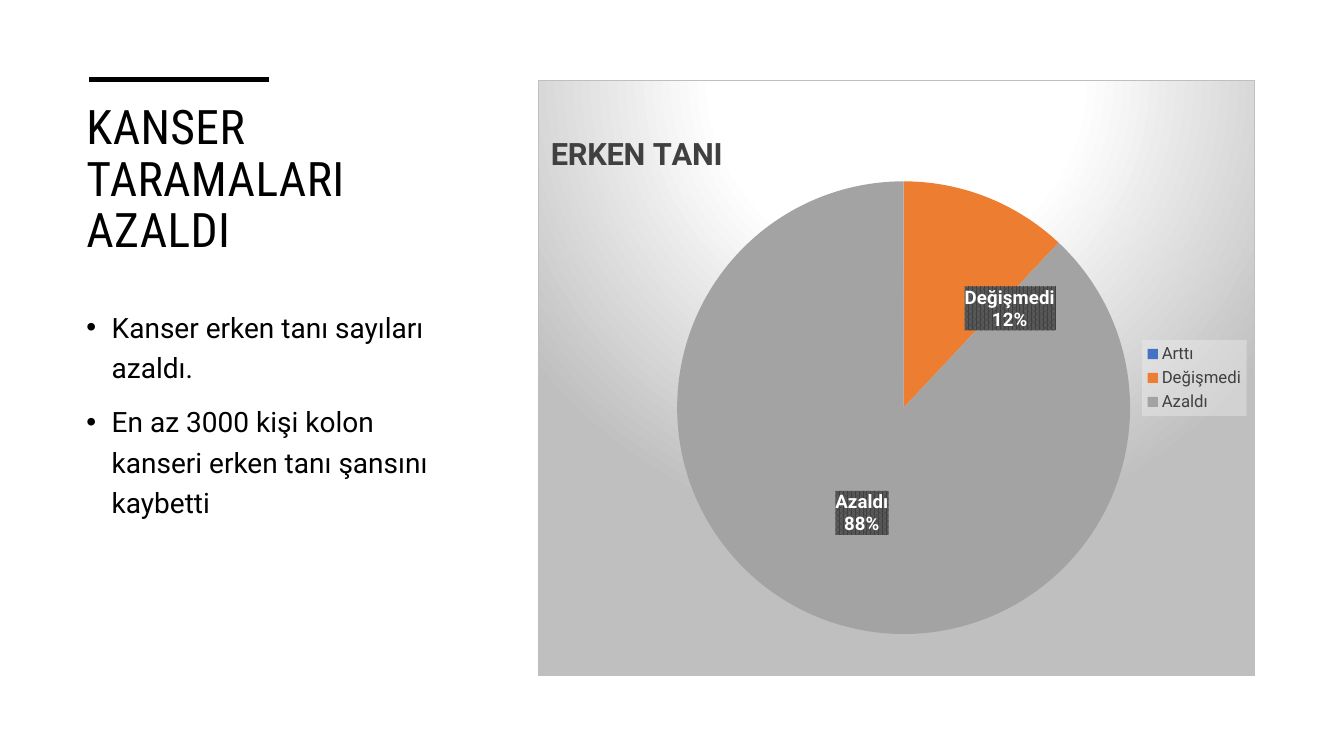
import copy

import lxml.etree
import pptx
import pptx.chart.data
import pptx.dml.color
import pptx.dml.fill
import pptx.dml.line
import pptx.enum.chart
import pptx.enum.dml
import pptx.enum.shapes
import pptx.oxml.ns
import pptx.oxml.xmlchemy
import pptx.util

RGBColor = pptx.dml.color.RGBColor
Pt = pptx.util.Pt
qn = pptx.oxml.ns.qn
BLACK = RGBColor(0x00, 0x00, 0x00)
WHITE = RGBColor(0xFF, 0xFF, 0xFF)
DARK_GREY = RGBColor(0x40, 0x40, 0x40)
MID_GREY = RGBColor(0x59, 0x59, 0x59)
SILVER = RGBColor(0xBF, 0xBF, 0xBF)
PALE_GREY = RGBColor(0xF2, 0xF2, 0xF2)
SLICE_COLORS = [RGBColor(0x44, 0x72, 0xC4), RGBColor(0xED, 0x7D, 0x31), RGBColor(0xA3, 0xA3, 0xA3)]

presentation = pptx.Presentation()
presentation.slide_width = pptx.util.Inches(13.33)
presentation.slide_height = pptx.util.Inches(7.5)
slide = presentation.slides.add_slide(presentation.slide_layouts[6])

# Grid of 100 columns by 100 rows
COLUMN = presentation.slide_width / 100
ROW = presentation.slide_height / 100
TEXT_LEFT = 5.7
TOP = 10.53


def add_text(top, width, height, texts, font_name, size, line_spacing):
    shape = slide.shapes.add_textbox(
        int(TEXT_LEFT * COLUMN), int(top * ROW), int(width * COLUMN), int(height * ROW))
    frame = shape.text_frame
    frame.word_wrap = True
    for index, text in enumerate(texts):
        paragraph = frame.add_paragraph() if index else frame.paragraphs[0]
        paragraph.line_spacing = line_spacing
        run = paragraph.add_run()
        run.text = text
        run.font.name = font_name
        run.font.size = Pt(size)
        run.font.color.rgb = BLACK
    return frame.paragraphs


def add_properties_before(text_properties):
    properties = pptx.oxml.xmlchemy.OxmlElement("c:spPr")
    text_properties.addprevious(properties)
    return properties, pptx.dml.fill.FillFormat.from_fill_parent(properties)


# Accent line and title
line = slide.shapes.add_connector(
    pptx.enum.shapes.MSO_CONNECTOR.STRAIGHT,
    int(6.6 * COLUMN), int(TOP * ROW), int(20.03 * COLUMN), int(TOP * ROW))
line.line.color.rgb = BLACK
line.line.width = Pt(3.5)
lxml.etree.SubElement(line._element.spPr, qn("a:effectLst"))

title = add_text(13.07, 29.86, 22.93, ["KANSER TARAMALARI AZALDI"], "Roboto Condensed", 34, 0.9)
title[0].runs[0].font._element.set("spc", "30")

# Bullets
bullets = add_text(39.47, 29.41, 51.07, [
    "Kanser erken tanı sayıları azaldı.",
    "En az 3000 kişi kolon kanseri erken tanı şansını kaybetti",
], "Roboto", 20, 1.2)
indent = pptx.util.Inches(0.25)
for paragraph in bullets:
    paragraph.space_before = Pt(10)
    properties = paragraph._element.get_or_add_pPr()
    properties.set("marL", str(indent))
    properties.set("indent", str(-indent))
    lxml.etree.SubElement(properties, qn("a:buFont"), typeface="Arial")
    lxml.etree.SubElement(properties, qn("a:buChar"), char="•")

# Pie chart
chart_data = pptx.chart.data.CategoryChartData()
chart_data.categories = ["Arttı", "Değişmedi", "Azaldı"]
chart_data.add_series("Series 1", [0, 12, 88])
chart = slide.shapes.add_chart(
    pptx.enum.chart.XL_CHART_TYPE.PIE, int(40 * COLUMN), int(TOP * ROW),
    int(53.41 * COLUMN), int(78.93 * ROW), chart_data).chart
chart.font.name = "Roboto"
chart.font.size = Pt(10)
chart.font.color.rgb = BLACK
plot = chart.plots[0]
plot.vary_by_categories = True
series = plot.series[0]
for index, color in enumerate(SLICE_COLORS):
    fill = series.points[index].format.fill
    fill.solid()
    fill.fore_color.rgb = color

# Chart background: light from the top centre
background, fill = add_properties_before(chart._chartSpace.find(qn("c:txPr")))
fill.gradient()
for stop, position, color in zip(fill.gradient_stops, (0.39, 1), (WHITE, SILVER)):
    stop.position = position
    stop.color.rgb = color
gradient = background.find(qn("a:gradFill"))
gradient.remove(gradient.find(qn("a:lin")))
circle = lxml.etree.SubElement(gradient, qn("a:path"), path="circle")
lxml.etree.SubElement(circle, qn("a:fillToRect"), l="50000", t="-80000", r="50000", b="180000")
border = pptx.dml.line.LineFormat(background)
border.color.rgb = SILVER
border.width = Pt(0.75)

# Chart title
chart.has_title = True
chart_title = chart.chart_title
run = chart_title.text_frame.paragraphs[0].add_run()
run.text = "ERKEN TANI"
run.font.name = "Roboto"
run.font.size = Pt(22)
run.font.bold = True
run.font.color.rgb = DARK_GREY

# Legend
chart.has_legend = True
legend = chart.legend
legend.position = pptx.enum.chart.XL_LEGEND_POSITION.RIGHT
legend.include_in_layout = False
legend.font.name = "Roboto"
legend.font.size = Pt(12)
legend.font.color.rgb = DARK_GREY
legend_box, fill = add_properties_before(legend._element.find(qn("c:txPr")))
fill.solid()
fill.fore_color.rgb = PALE_GREY
lxml.etree.SubElement(legend_box.find(".//" + qn("a:srgbClr")), qn("a:alpha"), val="39000")

# Data labels on patterned boxes; the second one is moved to the right
moved_label = series.points[1].data_label
labels = series.data_labels
labels.show_value = False
labels.show_category_name = True
labels.show_percentage = True
for label in (labels, moved_label):
    label.position = pptx.enum.chart.XL_LABEL_POSITION.CENTER
    label.font.name = "Roboto"
    label.font.size = Pt(13.3)
    label.font.bold = True
    label.font.color.rgb = WHITE
label_element = series._element.find(".//" + qn("c:dLbl"))
for tag, shown in (("c:showVal", "0"), ("c:showCatName", "1"), ("c:showPercent", "1")):
    label_element.find(qn(tag)).set("val", shown)
label_box, fill = add_properties_before(labels._element.find(qn("c:txPr")))
fill.patterned()
fill.pattern = pptx.enum.dml.MSO_PATTERN.PERCENT_75
fill.fore_color.rgb = DARK_GREY
fill.back_color.rgb = MID_GREY
for old_box in label_element.findall(qn("c:spPr")):
    label_element.remove(old_box)
label_element.find(qn("c:txPr")).addprevious(copy.deepcopy(label_box))

# Places of title, plot and moved label, as shares of the chart
EDGES = [("xMode", "edge"), ("yMode", "edge")]
for parent, position, settings in [
    (chart_title._element, 1, EDGES + [("x", 0.01), ("y", 0.08)]),
    (chart._chartSpace.chart.plotArea, 0, [("layoutTarget", "inner")] + EDGES
     + [("x", 0.04), ("y", 0.17), ("w", 0.94), ("h", 0.76)]),
    (label_element, 1, [("x", 0.09), ("y", 0.01)]),
]:
    for old_layout in parent.findall(qn("c:layout")):
        parent.remove(old_layout)
    layout = pptx.oxml.xmlchemy.OxmlElement("c:layout")
    parent.insert(position, layout)
    manual_layout = lxml.etree.SubElement(layout, qn("c:manualLayout"))
    for name, value in settings:
        lxml.etree.SubElement(manual_layout, qn("c:" + name), val=str(value))

presentation.save("out.pptx")
